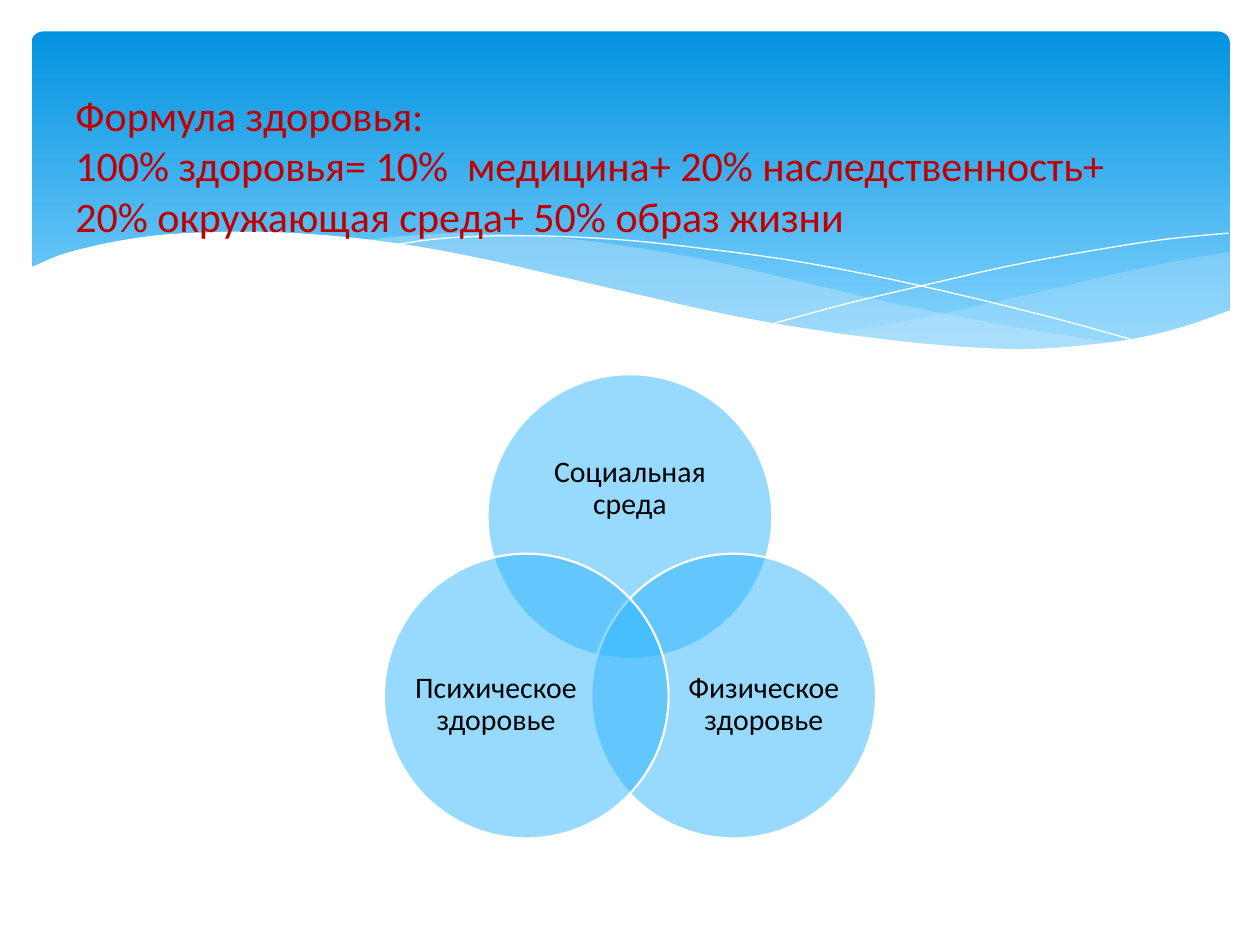
from math import cos, radians, sin

from pptx import Presentation
from pptx.dml.color import RGBColor
from pptx.enum.shapes import MSO_SHAPE as Shape
from pptx.enum.text import MSO_ANCHOR as Anchor, PP_ALIGN as Align
from pptx.oxml.ns import qn
from pptx.oxml.xmlchemy import OxmlElement
from pptx.util import Inches, Pt

TITLE = ("Формула здоровья:\n100% здоровья= 10%  медицина+ 20% наследственность+ "
         "20% окружающая среда+ 50% образ жизни")

# label, angle of the circle, label size, label shift from the circle's centre
CIRCLES = [
    ("Социальная среда", -90, (1.66, 1.02), (0, -0.22)),
    ("Физическое здоровье", 30, (1.36, 1.25), (0.24, 0.07)),
    ("Психическое здоровье", 150, (1.36, 1.25), (-0.24, 0.07)),
]
CENTRE, RING, RADIUS = (5, 5.05), 0.95, 1.13

# Each band is a list of curves joined by straight edges
BANDS = [
    ([[(9.76, 2), (9.35, 2.07), (8.91, 2.16), (8.32, 2.3), (7.79, 2.42),
       (7.29, 2.53), (6.61, 2.65)],
      [(6.61, 2.65), (7.05, 2.71), (7.57, 2.76), (8.14, 2.78), (8.63, 2.75),
       (9.05, 2.69), (9.42, 2.59), (9.76, 2.47)]], "C6E7FC", 29),
    ([[(8.93, 2.73), (8.37, 2.65), (7.75, 2.54), (7.06, 2.4), (6.29, 2.22),
       (5.69, 2.08), (5.14, 1.98), (4.65, 1.91), (4.2, 1.87), (3.61, 1.85),
       (3.13, 1.88), (2.86, 1.91)],
      [(2.86, 1.91), (3.42, 1.99), (4.04, 2.11), (4.49, 2.22), (5.3, 2.4),
       (6.01, 2.55), (6.65, 2.66), (7.22, 2.74), (7.85, 2.78), (8.38, 2.78),
       (8.93, 2.73)]], "C6E7FC", 40),
]
LINES = [
    [(3.09, 1.95), (3.53, 1.89), (4.16, 1.87), (4.89, 1.9), (5.56, 1.97),
     (6.36, 2.08), (7.27, 2.26), (8.31, 2.51), (9.07, 2.72)],
    [(6.13, 2.57), (6.72, 2.41), (7.48, 2.23), (8.06, 2.1), (8.66, 1.99),
     (9.24, 1.9), (9.75, 1.85)],
]
FRONT = [
    [(9.77, 2.46), (9.4, 2.59), (8.99, 2.69), (8.5, 2.75), (8.09, 2.77),
     (7.61, 2.75), (7.08, 2.7), (6.48, 2.62), (5.79, 2.5), (5.03, 2.33),
     (4.47, 2.2), (3.91, 2.07), (3.4, 1.97), (2.92, 1.9), (2.5, 1.86),
     (2.11, 1.84), (1.77, 1.84), (1.32, 1.86), (0.95, 1.91), (0.67, 1.97),
     (0.46, 2.03), (0.23, 2.13)],
    [(0.23, 3.29), (9.77, 3.29)],
]

deck = Presentation()
deck.slide_width, deck.slide_height = Inches(10), Inches(7.5)
slide = deck.slides.add_slide(deck.slide_layouts[6])
shapes = slide.shapes


def rgb(code):
    return RGBColor.from_string(code)


def paint(shape, fill=None, alpha=100, line=None, width=0):
    shape.shadow.inherit = False
    if fill:
        shape.fill.solid()
        shape.fill.fore_color.rgb = rgb(fill)
        if alpha < 100:
            mark = OxmlElement("a:alpha")
            mark.set("val", str(alpha * 1000))
            shape._element.spPr.find(f".//{qn('a:srgbClr')}").append(mark)
    else:
        shape.fill.background()
    if line:
        shape.line.color.rgb = rgb(line)
        shape.line.width = Pt(width)
    else:
        shape.line.fill.background()


def smooth(knots, steps=5):
    """Points of a Catmull-Rom curve through the knots."""
    ends = [knots[0], *knots, knots[-1]]
    points = [knots[0]]
    for a, b, c, d in zip(ends, ends[1:], ends[2:], ends[3:]):
        for i in range(1, steps + 1):
            t = i / steps
            points.append(tuple(
                (2 * q + (r - p) * t + (2 * p - 5 * q + 4 * r - s) * t ** 2
                 + (3 * q - p - 3 * r + s) * t ** 3) / 2
                for p, q, r, s in zip(a, b, c, d)))
    return points


def wave(curves, close=True, **style):
    points = [(Inches(x), Inches(y)) for curve in curves for x, y in smooth(curve)]
    pen = shapes.build_freeform(*points[0], scale=1.0)
    pen.add_line_segments(points[1:], close=close)
    paint(pen.convert_to_shape(), **style)


def write(text, box, size, color, align=Align.LEFT, spacing=None, inset=(0, 0)):
    frame = shapes.add_textbox(*map(Inches, box)).text_frame
    frame.word_wrap = True
    frame.vertical_anchor = Anchor.MIDDLE
    frame.margin_left = frame.margin_right = Inches(inset[0])
    frame.margin_top = frame.margin_bottom = Inches(inset[1])
    para = frame.paragraphs[0]
    para.text, para.alignment, para.line_spacing = text, align, spacing
    for run in para.runs:
        run.font.name, run.font.size = "Calibri", Pt(size)
        run.font.color.rgb = rgb(color)


def around(x, y, w, h):
    return x - w / 2, y - h / 2, w, h


# Header
panel = shapes.add_shape(Shape.ROUNDED_RECTANGLE, *map(Inches, (0.25, 0.25, 9.51, 2.7)))
panel.adjustments[0] = 0.034
paint(panel)
panel.fill.gradient()
panel.fill.gradient_angle = 270
for stop, (place, color) in zip(panel.fill.gradient_stops,
                                [(0, "0293E0"), (0.9, "83D3FE")]):
    stop.position, stop.color.rgb = place, rgb(color)

for curves, color, alpha in BANDS:
    wave(curves, fill=color, alpha=alpha)
for curve in LINES:
    wave([curve], close=False, line="FFFFFF")
wave(FRONT, fill="FFFFFF")

# Venn diagram
for label, angle, size, shift in CIRCLES:
    x = CENTRE[0] + RING * cos(radians(angle))
    y = CENTRE[1] + RING * sin(radians(angle))
    disc = shapes.add_shape(
        Shape.OVAL, *map(Inches, around(x, y, 2 * RADIUS, 2 * RADIUS)))
    paint(disc, fill="31B6FD", alpha=50, line="FFFFFF", width=1.25)
    write(label, around(x + shift[0], y + shift[1], *size), 17, "000000",
          align=Align.CENTER, spacing=0.9)

write(TITLE, (0.5, 0.37, 9, 1.88), 24, "C00000", inset=(0.1, 0.05))

deck.save("out.pptx")
